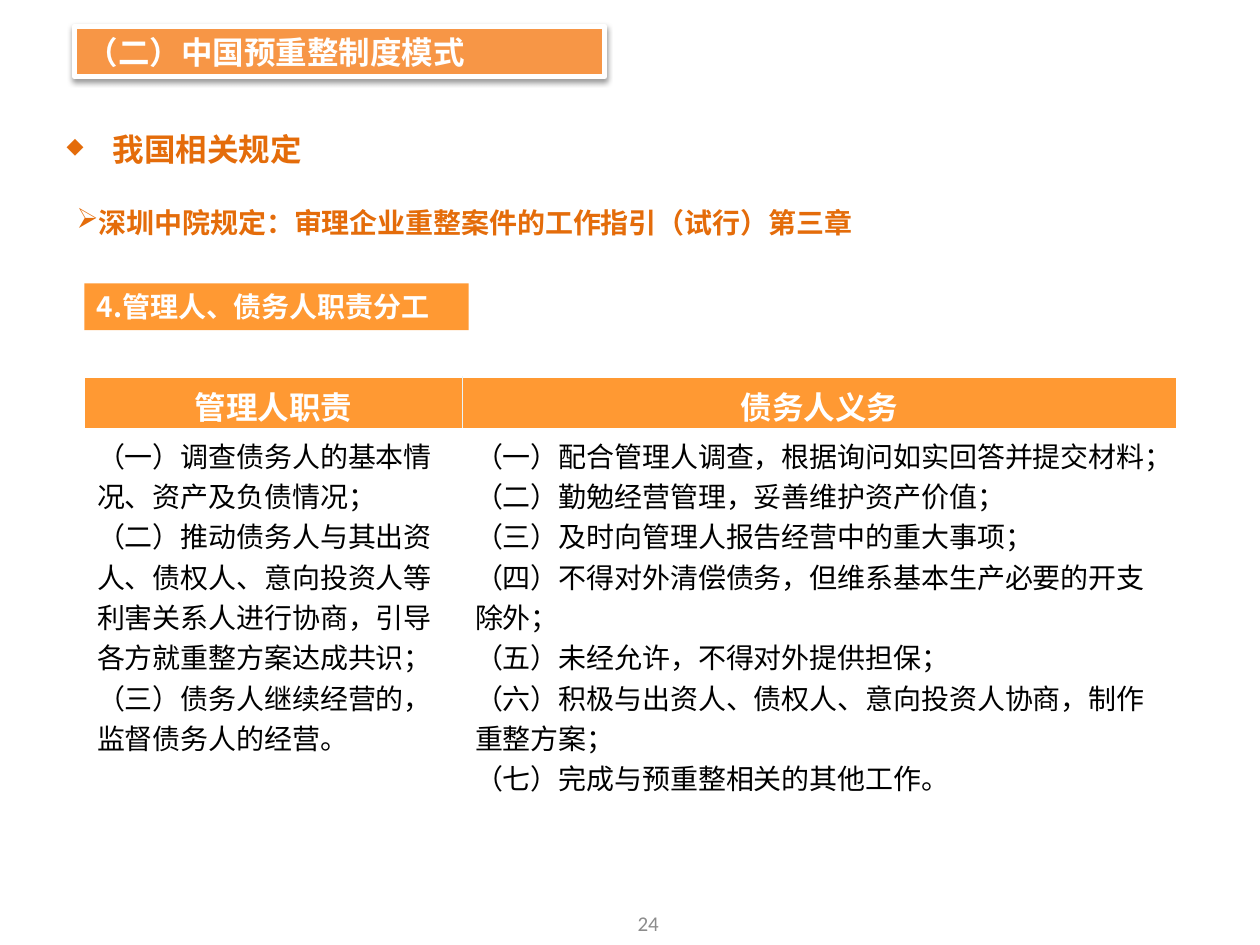
"""Builds the slide on duties of administrators and debtors in pre-reorganization."""
from dataclasses import dataclass

from lxml import etree
from pptx import Presentation
from pptx.dml.color import RGBColor
from pptx.enum.shapes import MSO_SHAPE
from pptx.enum.text import MSO_ANCHOR, MSO_AUTO_SIZE, PP_ALIGN
from pptx.oxml.ns import qn
from pptx.util import Inches, Pt

RECTANGLE = MSO_SHAPE.RECTANGLE
MIDDLE = MSO_ANCHOR.MIDDLE
TOP = MSO_ANCHOR.TOP
GROW = MSO_AUTO_SIZE.SHAPE_TO_FIT_TEXT
FIXED = MSO_AUTO_SIZE.NONE
LEFT = PP_ALIGN.LEFT
CENTER = PP_ALIGN.CENTER


@dataclass(frozen=True)
class Theme:
    font: str = "Noto Sans CJK SC"
    number_font: str = "Calibri"
    banner: str = "F79646"
    label: str = "FF9933"
    accent: str = "E46C0A"
    white: str = "FFFFFF"
    black: str = "000000"
    gray: str = "8C8C8C"
    divider: str = "E8F4F8"
    title_size: int = 18
    body_size: int = 16
    number_size: int = 12


THEME = Theme()

DUTIES = {
    "管理人职责": [
        "（一）调查债务人的基本情况、资产及负债情况；",
        "（二）推动债务人与其出资人、债权人、意向投资人等利害关系人进行协商，引导各方就重整方案达成共识；",
        "（三）债务人继续经营的，监督债务人的经营。",
    ],
    "债务人义务": [
        "（一）配合管理人调查，根据询问如实回答并提交材料；",
        "（二）勤勉经营管理，妥善维护资产价值；",
        "（三）及时向管理人报告经营中的重大事项；",
        "（四）不得对外清偿债务，但维系基本生产必要的开支除外；",
        "（五）未经允许，不得对外提供担保；",
        "（六）积极与出资人、债权人、意向投资人协商，制作重整方案；",
        "（七）完成与预重整相关的其他工作。",
    ],
}


def color(value):
    return RGBColor.from_string(value)


def style_text(text_frame, size, text_color, bold=False, align=LEFT, font=THEME.font):
    for paragraph in text_frame.paragraphs:
        paragraph.alignment = align
        for run in paragraph.runs:
            run.font.size = Pt(size)
            run.font.bold = bold
            run.font.color.rgb = color(text_color)
            run.font.name = font
            east_asian = etree.Element(qn("a:ea"), typeface=font)
            run.font._element.find(qn("a:latin")).addnext(east_asian)


def add_text(slide, box, text, wrap=True, anchor=TOP, auto_size=GROW):
    shape = slide.shapes.add_textbox(*map(Inches, box))
    text_frame = shape.text_frame
    text_frame.word_wrap = wrap
    text_frame.auto_size = auto_size
    text_frame.vertical_anchor = anchor
    text_frame.text = text
    return text_frame


def add_bullet_line(slide, box, bullet, text, size, margin, spacing, scale=100, wrap=True):
    text_frame = add_text(slide, box, text, wrap)
    paragraph = text_frame.paragraphs[0]
    properties = paragraph._p.get_or_add_pPr()
    properties.set("marL", str(Inches(margin)))
    properties.set("indent", str(Inches(-0.31)))
    etree.SubElement(properties, qn("a:buSzPct"), val=str(scale * 1000))
    etree.SubElement(properties, qn("a:buChar"), char=bullet)
    paragraph.line_spacing = spacing
    style_text(text_frame, size, THEME.accent, bold=True)


def add_banner(slide, box, text, fill, size):
    shape = slide.shapes.add_shape(RECTANGLE, *map(Inches, box))
    shape.shadow.inherit = False
    shape.fill.solid()
    shape.fill.fore_color.rgb = color(fill)
    shape.line.fill.background()
    text_frame = shape.text_frame
    text_frame.word_wrap = True
    text_frame.auto_size = GROW
    text_frame.vertical_anchor = TOP
    text_frame.text = text
    style_text(text_frame, size, THEME.white, bold=True)
    return shape


def add_frame_and_shadow(shape):
    shape.line.color.rgb = color(THEME.white)
    shape.line.width = Pt(3)
    effects = shape._element.spPr.find(qn("a:effectLst"))
    shadow = etree.SubElement(
        effects, qn("a:outerShdw"), blurRad=str(Pt(3.1)), dist=str(Pt(1.6)),
        dir="5400000", rotWithShape="0")
    shade = etree.SubElement(shadow, qn("a:srgbClr"), val=THEME.black)
    etree.SubElement(shade, qn("a:alpha"), val="38000")


def add_cell_border(cell, side):
    border = etree.Element(qn(side), w=str(Pt(1)))
    fill = etree.SubElement(border, qn("a:solidFill"))
    etree.SubElement(fill, qn("a:srgbClr"), val=THEME.divider)
    cell._tc.get_or_add_tcPr().insert(0, border)


def add_duty_table(slide, left, top, widths, heights):
    box = (left, top, sum(widths), sum(heights))
    table = slide.shapes.add_table(2, len(DUTIES), *map(Inches, box)).table
    table.first_row = False
    table.horz_banding = False
    for row, height in zip(table.rows, heights):
        row.height = Inches(height)
    sides = ("a:lnR", "a:lnL")
    for index, (heading, duties) in enumerate(DUTIES.items()):
        table.columns[index].width = Inches(widths[index])
        header, body = table.cell(0, index), table.cell(1, index)
        header.margin_bottom = 0
        header.fill.solid()
        header.fill.fore_color.rgb = color(THEME.label)
        header.text_frame.text = heading
        style_text(header.text_frame, THEME.title_size, THEME.white, True, CENTER)
        add_cell_border(header, sides[index])
        body.fill.background()
        body.text_frame.text = "\n".join(duties)
        style_text(body.text_frame, THEME.body_size, THEME.black)


def main():
    presentation = Presentation()
    presentation.slide_width = Inches(10)
    presentation.slide_height = Inches(7.5)
    slide = presentation.slides.add_slide(presentation.slide_layouts[6])

    number = add_text(slide, (3.98, 7.13, 2.33, 0.4), "24", anchor=MIDDLE, auto_size=FIXED)
    style_text(number, THEME.number_size, THEME.gray, align=CENTER, font=THEME.number_font)

    title = add_banner(slide, (0.59, 0.21, 4.21, 0.4), "（二）中国预重整制度模式",
                       THEME.banner, THEME.title_size)
    add_frame_and_shadow(title)
    add_bullet_line(slide, (0.43, 0.68, 4.23, 0.62), "◆", " 我国相关规定",
                    THEME.title_size, margin=0.31, spacing=2.0, scale=70)
    add_bullet_line(slide, (0.51, 1.45, 6.62, 0.44), "➢",
                    "深圳中院规定：审理企业重整案件的工作指引（试行）第三章",
                    THEME.body_size, margin=0, spacing=1.5, wrap=False)
    add_duty_table(slide, 0.67, 2.99, widths=(3, 5.67), heights=(0.41, 3.1))
    add_banner(slide, (0.67, 2.25, 3.05, 0.37), "4.管理人、债务人职责分工",
               THEME.label, THEME.body_size)
    presentation.save("out.pptx")


if __name__ == "__main__":
    main()
